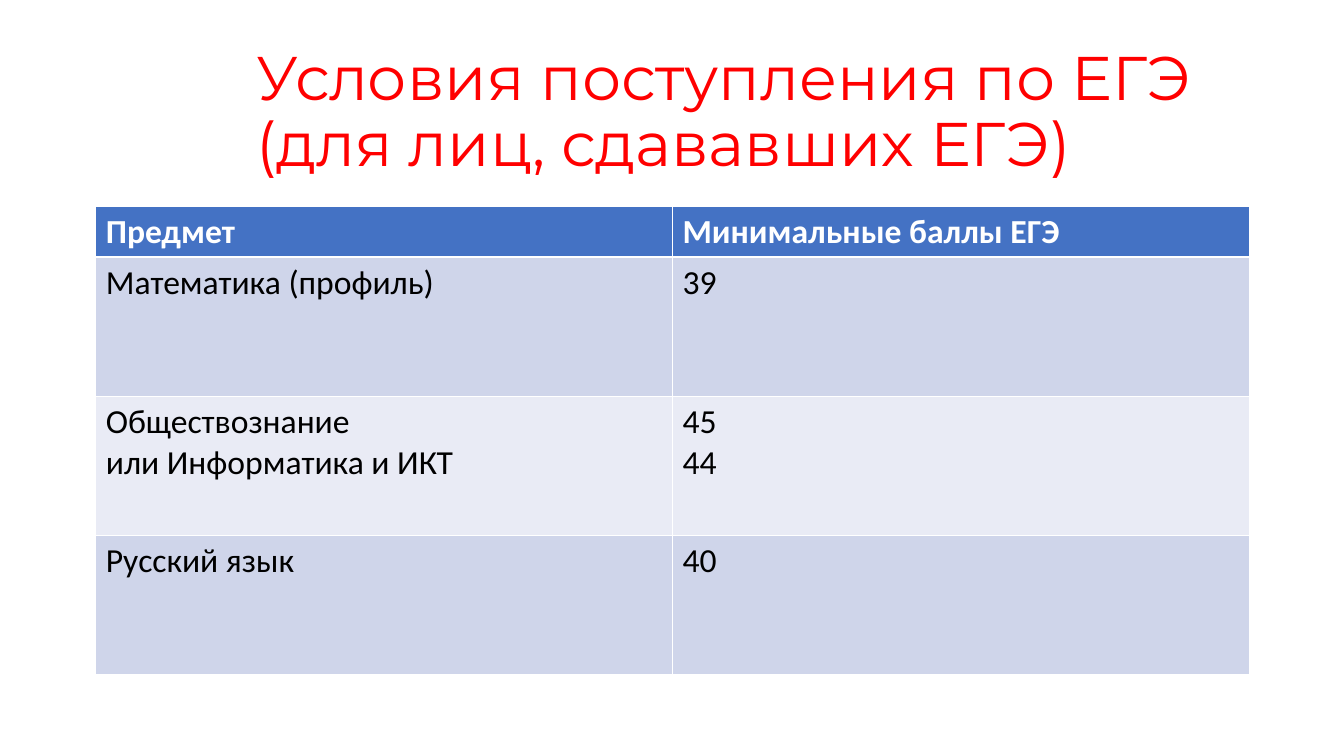
"""Builds a slide with the minimum exam scores required for admission."""
from pptx import Presentation
from pptx.dml.color import RGBColor
from pptx.enum.text import MSO_ANCHOR
from pptx.util import Pt

PX = 9144
MIDDLE = MSO_ANCHOR.MIDDLE
COLORS = {
    "title": "FF0000",
    "header": "4472C4",
    "header_text": "FFFFFF",
    "body_text": "000000",
    "odd_row": "CFD5EA",
    "even_row": "E9EBF5",
}
HEADER_HEIGHT = 50
ROW_HEIGHT = 138
COLUMN_WIDTH = 572
ROWS = [
    ("Предмет", "Минимальные баллы ЕГЭ"),
    ("Математика (профиль)", "39"),
    ("Обществознание\nили Информатика и ИКТ", "45\n44"),
    ("Русский язык", "40"),
]


def style_font(font, name, size, color, bold=False):
    font.name = name
    font.size = Pt(size)
    font.bold = bold
    font.color.rgb = RGBColor.from_string(COLORS[color])


presentation = Presentation()
presentation.slide_width = 1333 * PX
presentation.slide_height = 750 * PX
blank_layout = presentation.slide_layouts[6]
slide = presentation.slides.add_slide(blank_layout)

title = slide.shapes.add_textbox(245 * PX, 40 * PX, 996 * PX, 145 * PX)
title_frame = title.text_frame
title_frame.word_wrap = True
title_frame.vertical_anchor = MIDDLE
title_frame.text = "Условия поступления по ЕГЭ (для лиц, сдававших ЕГЭ)"
title_paragraph = title_frame.paragraphs[0]
title_paragraph.line_spacing = 0.9
style_font(title_paragraph.runs[0].font, "Montserrat", 44, "title")

table_height = HEADER_HEIGHT + (len(ROWS) - 1) * ROW_HEIGHT
scores = slide.shapes.add_table(
    len(ROWS), 2, 95 * PX, 205 * PX, 2 * COLUMN_WIDTH * PX, table_height * PX
).table
for column in scores.columns:
    column.width = COLUMN_WIDTH * PX

for row_index, row_texts in enumerate(ROWS):
    is_header = row_index == 0
    if is_header:
        fill_color = "header"
    else:
        fill_color = "odd_row" if row_index % 2 else "even_row"
    text_color = "header_text" if is_header else "body_text"
    row_height = HEADER_HEIGHT if is_header else ROW_HEIGHT
    scores.rows[row_index].height = row_height * PX
    for column_index, text in enumerate(row_texts):
        cell = scores.cell(row_index, column_index)
        cell.fill.solid()
        cell.fill.fore_color.rgb = RGBColor.from_string(COLORS[fill_color])
        cell.text_frame.text = text
        for paragraph in cell.text_frame.paragraphs:
            style_font(paragraph.runs[0].font, "Calibri", 24, text_color, is_header)

presentation.save("out.pptx")
